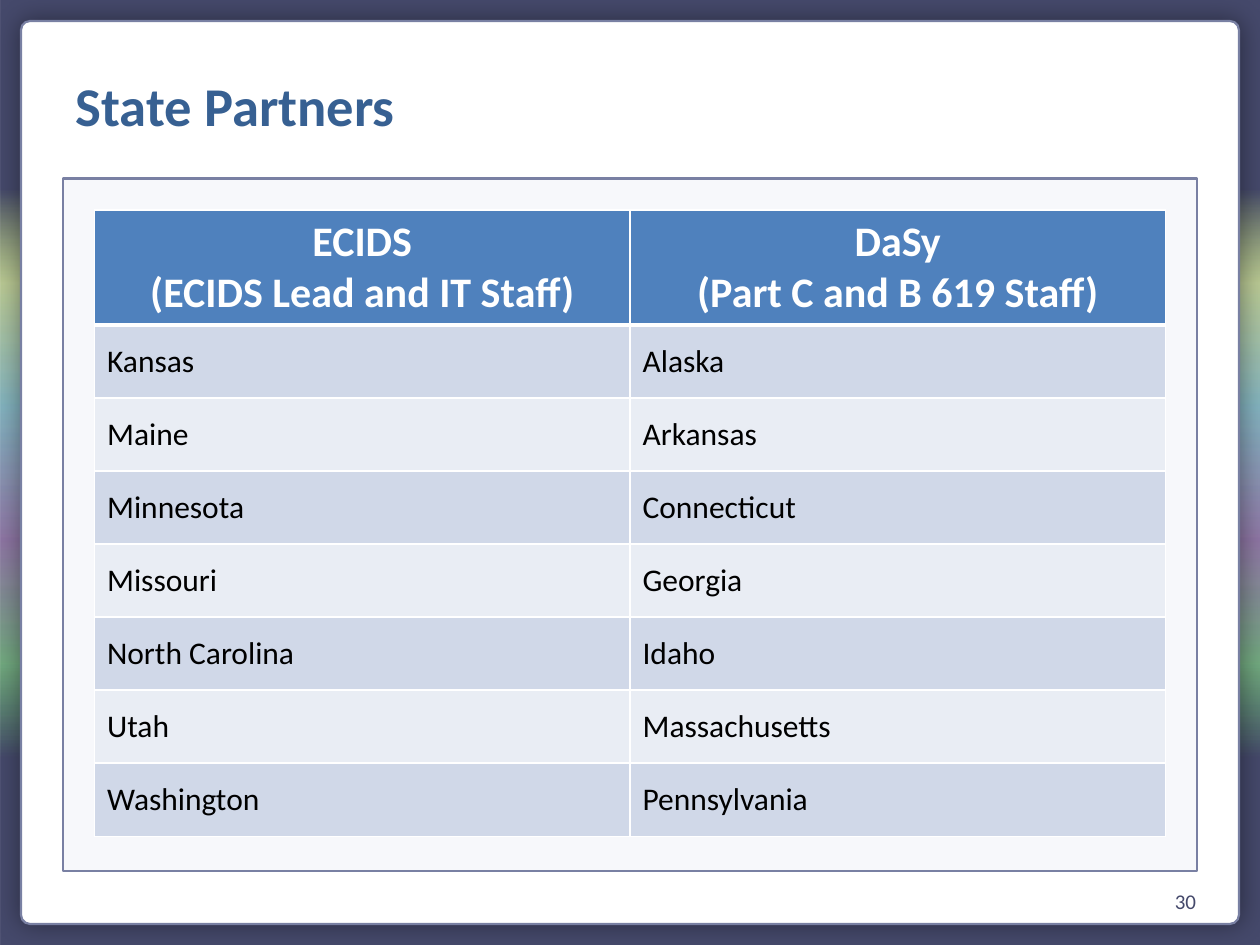
from lxml.etree import SubElement
from pptx import Presentation
from pptx.dml.color import RGBColor
from pptx.enum.shapes import MSO_SHAPE
from pptx.enum.text import MSO_ANCHOR, MSO_AUTO_SIZE, PP_ALIGN
from pptx.oxml.ns import qn
from pptx.util import Pt

TITLE = "State Partners"
PAGE_NUMBER = "30"
HEADERS = ["ECIDS\n(ECIDS Lead and IT Staff)", "DaSy\n(Part C and B 619 Staff)"]
PARTNERS = [
    ("Kansas", "Alaska"),
    ("Maine", "Arkansas"),
    ("Minnesota", "Connecticut"),
    ("Missouri", "Georgia"),
    ("North Carolina", "Idaho"),
    ("Utah", "Massachusetts"),
    ("Washington", "Pennsylvania"),
]
BACKDROP_STOPS = [
    (20, "45496B", 100),
    (30, "839F3F", 55),
    (43, "328196", 60),
    (57, "542E75", 65),
    (70, "37864A", 70),
    (80, "45496B", 100),
]
FONT = "Calibri"
INK, EDGE, WHITE = "45496B", "7980A3", "FFFFFF"
HEADER_FILL = "4F81BD"
BANDS = ["D0D8E8", "E9EDF4"]
HEADER_HEIGHT, ROW_HEIGHT, COLUMN_WIDTH = 65.5, 41.75, 306


def rgb(value):
    return RGBColor.from_string(value)


def add(parent, tag, **attributes):
    return SubElement(parent, qn(tag), {key: str(value) for key, value in attributes.items()})


def add_color(parent, value, opacity=100):
    color = add(parent, "a:srgbClr", val=value)
    if opacity < 100:
        add(color, "a:alpha", val=opacity * 1000)


def add_panel(slide, kind, box, fill=None, edge=None):
    panel = slide.shapes.add_shape(kind, *map(Pt, box))
    panel.shadow.inherit = False
    if fill:
        panel.fill.solid()
        panel.fill.fore_color.rgb = rgb(fill)
    if edge:
        panel.line.color.rgb = rgb(edge)
        panel.line.width = Pt(1.25)
    else:
        panel.line.fill.background()
    return panel


def fill_backdrop(backdrop):
    backdrop.fill.gradient()
    gradient = backdrop._element.spPr.find(qn("a:gradFill"))
    for child in list(gradient):
        gradient.remove(child)
    stops = add(gradient, "a:gsLst")
    for position, color, opacity in BACKDROP_STOPS:
        add_color(add(stops, "a:gs", pos=position * 1000), color, opacity)
    add(gradient, "a:lin", ang=90 * 60000, scaled=0)


def add_glow_shadow(card):
    effects = card._element.spPr.find(qn("a:effectLst"))
    shadow = add(effects, "a:outerShdw", blurRad=Pt(15), dist=0, dir=0, algn="ctr", rotWithShape=0)
    add_color(shadow, "000000", 40)


def style_text(frame, size, color, bold=False, align=PP_ALIGN.LEFT):
    for paragraph in frame.paragraphs:
        paragraph.alignment = align
        for run in paragraph.runs:
            run.font.name = FONT
            run.font.size = Pt(size)
            run.font.bold = bold
            run.font.color.rgb = rgb(color)


def set_borders(cell, bottom, top):
    properties = cell._tc.get_or_add_tcPr()
    for side, width in zip("LRTB", (1, 1, top, bottom)):
        border = add(properties, f"a:ln{side}", w=Pt(width))
        add_color(add(border, "a:solidFill"), WHITE)


def add_partner_table(slide):
    rows = [HEADERS, *PARTNERS]
    heights = [HEADER_HEIGHT] + [ROW_HEIGHT] * len(PARTNERS)
    table = slide.shapes.add_table(
        len(rows), len(HEADERS), Pt(54), Pt(120),
        Pt(COLUMN_WIDTH * len(HEADERS)), Pt(sum(heights)),
    ).table
    for column in table.columns:
        column.width = Pt(COLUMN_WIDTH)
    for r, (labels, height) in enumerate(zip(rows, heights)):
        table.rows[r].height = Pt(height)
        for c, label in enumerate(labels):
            cell = table.cell(r, c)
            cell.text_frame.text = label
            cell.vertical_anchor = MSO_ANCHOR.MIDDLE
            set_borders(cell, bottom=3 if r == 0 else 1, top=3 if r == 1 else 1)
            cell.fill.solid()
            if r == 0:
                cell.fill.fore_color.rgb = rgb(HEADER_FILL)
                style_text(cell.text_frame, 24, WHITE, True, PP_ALIGN.CENTER)
            else:
                cell.fill.fore_color.rgb = rgb(BANDS[(r - 1) % 2])
                style_text(cell.text_frame, 18, "000000")


def place_title(slide):
    title = slide.shapes.title
    slide.shapes._spTree.append(title._element)
    title.left, title.top, title.width, title.height = map(Pt, (36, 30, 618, 60))
    title.text_frame.text = TITLE
    title.text_frame.auto_size = MSO_AUTO_SIZE.NONE
    title.text_frame.vertical_anchor = MSO_ANCHOR.MIDDLE
    style_text(title.text_frame, 31.2, "376092", True)


def add_page_number(slide):
    number = slide.shapes.add_textbox(*map(Pt, (522.5, 500.5, 168, 28.75))).text_frame
    number.word_wrap = True
    number.vertical_anchor = MSO_ANCHOR.MIDDLE
    number.text = PAGE_NUMBER
    style_text(number, 12, INK, align=PP_ALIGN.RIGHT)


def main():
    deck = Presentation()
    deck.slide_width, deck.slide_height = Pt(720), Pt(540)
    slide = deck.slides.add_slide(deck.slide_layouts[5])
    fill_backdrop(add_panel(slide, MSO_SHAPE.RECTANGLE, (0, 0, 720, 541.5)))
    card = add_panel(slide, MSO_SHAPE.ROUNDED_RECTANGLE, (12, 12, 696, 516), WHITE, EDGE)
    card.adjustments[0] = 0.01
    add_glow_shadow(card)
    add_panel(slide, MSO_SHAPE.RECTANGLE, (36, 102, 648, 396), "F7F8FB", EDGE)
    add_page_number(slide)
    place_title(slide)
    add_partner_table(slide)
    deck.save("out.pptx")


if __name__ == "__main__":
    main()
